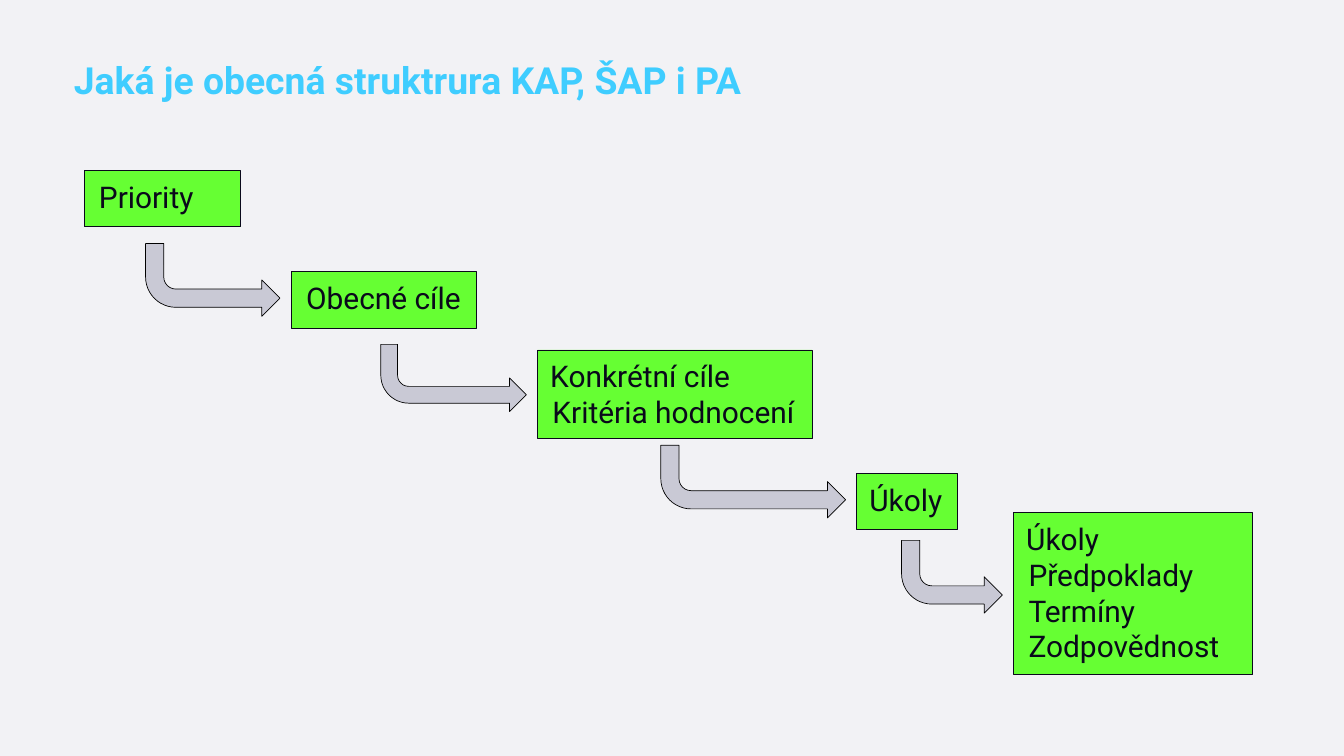
from pptx import Presentation
from pptx.dml.color import RGBColor
from pptx.enum import shapes, text
from pptx.util import Pt

COLORS = {"background": "F2F2F5", "title": "3FCDFF", "box": "66FF33",
          "ink": "0A091B", "arrow": "C9C9D5", "outline": "000000"}
FONT = "Roboto"
TITLE = "Jaká je obecná struktrura KAP, ŠAP i PA"

# lines, (left, top, width, height), left margin of the first line
STEPS = [
    (["Priority"], (90, 183, 168, 60), 16),
    (["Obecné cíle"], (312, 291, 198, 61), 16),
    (["Konkrétní cíle", "Kritéria hodnocení"], (576, 375, 294, 95), 13.5),
    (["Úkoly"], (918, 507, 108, 60), 13.5),
    (["Úkoly", "Předpoklady", "Termíny", "Zodpovědnost"],
     (1086, 549, 256, 174), 13.5),
]
# left, top, height; each arrow ends just before the next step
ARROWS = [(156, 261, 78), (408, 369, 72), (708, 477, 78), (966, 579, 78)]
ARROW_GAP = 12
TEXT_MARGIN = 16


def rgb(name):
    return RGBColor.from_string(COLORS[name])


def write(tf, lines, *, size, color, bold=False, spacing=None,
          margin=0, first_margin=0):
    tf.word_wrap = True
    tf.vertical_anchor = text.MSO_ANCHOR.TOP
    for i, line in enumerate(lines):
        p = tf.add_paragraph() if i else tf.paragraphs[0]
        p.alignment = text.PP_ALIGN.LEFT
        p.line_spacing = spacing
        left = margin if i else first_margin
        p._p.get_or_add_pPr().set("marL", str(Pt(left)))
        r = p.add_run()
        r.text = line
        r.font.name, r.font.size, r.font.bold = FONT, Pt(size), bold
        r.font.color.rgb = rgb(color)


def add_shape(slide, kind, place, fill, line):
    sp = slide.shapes.add_shape(kind, *map(Pt, place))
    sp.shadow.inherit = False
    sp.fill.solid()
    sp.fill.fore_color.rgb = rgb(fill)
    sp.line.color.rgb = rgb(line)
    sp.line.width = Pt(0.75)
    return sp


def add_step(slide, lines, place, first_margin):
    sp = add_shape(slide, shapes.MSO_SHAPE.RECTANGLE, place, "box", "ink")
    tf = sp.text_frame
    tf.margin_left = tf.margin_right = 0
    tf.margin_top, tf.margin_bottom = Pt(8.64), Pt(3.6)
    write(tf, lines, size=32, color="ink",
          margin=TEXT_MARGIN, first_margin=first_margin)


def add_arrow(slide, left, top, height, next_left):
    place = (left, top, next_left - ARROW_GAP - left, height)
    sp = add_shape(slide, shapes.MSO_SHAPE.BENT_ARROW, place,
                   "arrow", "outline")
    for i, value in enumerate((0.25, 0.25, 0.25, 0.416)):
        sp.adjustments[i] = value
    sp._element.spPr.xfrm.set("flipV", "1")


def main():
    prs = Presentation()
    prs.slide_width, prs.slide_height = Pt(1440), Pt(810)
    slide = prs.slides.add_slide(prs.slide_layouts[6])
    slide.background.fill.solid()
    slide.background.fill.fore_color.rgb = rgb("background")

    title = slide.shapes.add_textbox(Pt(72), Pt(63.36), Pt(1299.6), Pt(51))
    write(title.text_frame, [TITLE], size=40, color="title",
          bold=True, spacing=0.9)

    for step in STEPS:
        add_step(slide, *step)
    for arrow, (_, next_place, _) in zip(ARROWS, STEPS[1:]):
        add_arrow(slide, *arrow, next_place[0])

    prs.save("out.pptx")


if __name__ == "__main__":
    main()
